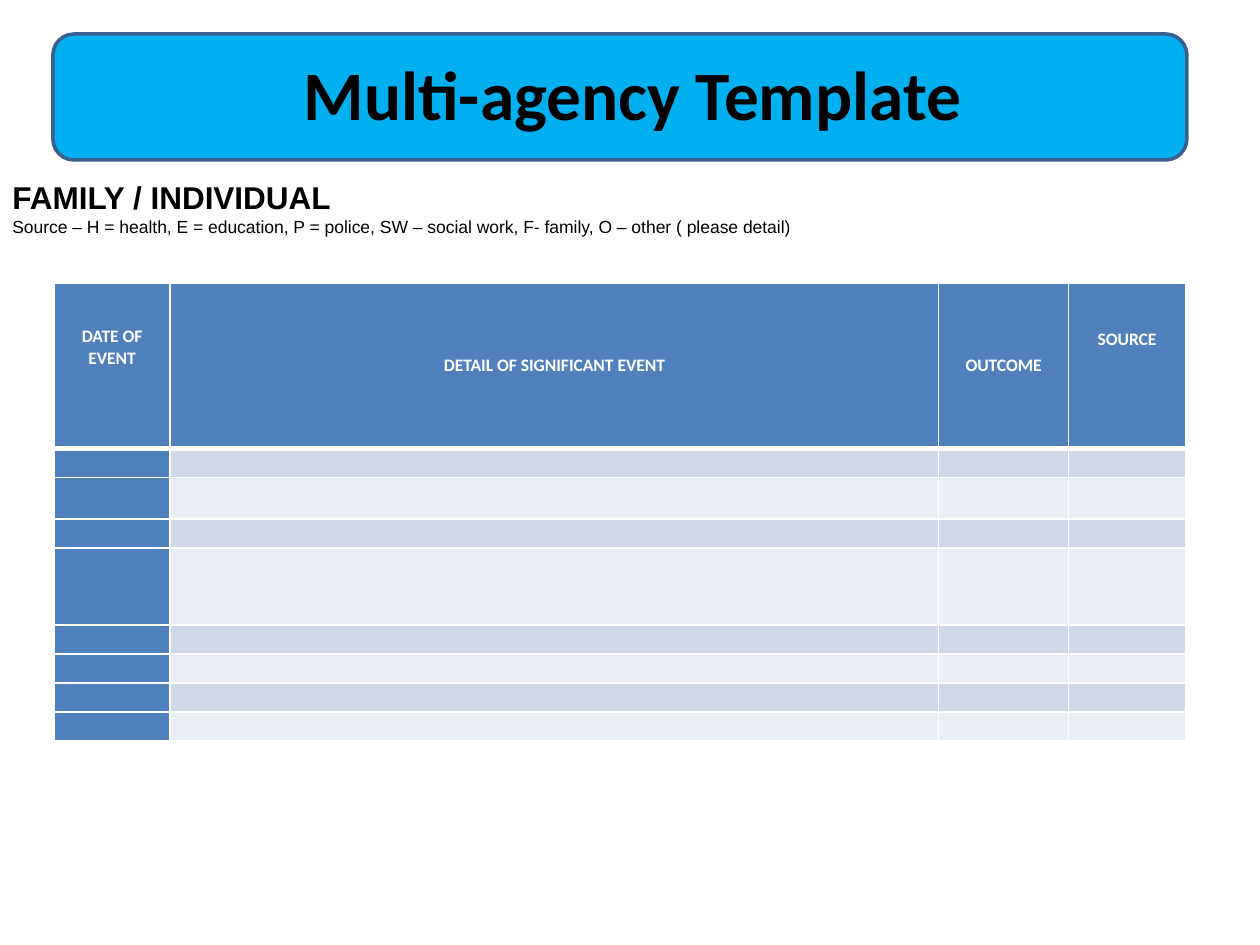
from dataclasses import dataclass

from lxml.etree import SubElement
from pptx import Presentation
from pptx.dml.color import RGBColor
from pptx.enum.shapes import MSO_SHAPE
from pptx.enum.text import MSO_ANCHOR, PP_ALIGN
from pptx.oxml.ns import qn
from pptx.util import Inches, Pt

BLUE, WHITE, BLACK = "4F81BD", "FFFFFF", "000000"
BANDS = ("D0D8E8", "E9EDF4")
COLUMN_WIDTHS = (0.92, 6.1, 1.03, 0.93)
HEADER_HEIGHT = 1.31
ROW_HEIGHTS = (0.23, 0.33, 0.23, 0.61, 0.23, 0.23, 0.23, 0.23)


@dataclass
class Heading:
    text: str
    anchor: MSO_ANCHOR = MSO_ANCHOR.MIDDLE
    top_margin: float = 0


HEADINGS = (
    Heading("DATE OF EVENT", MSO_ANCHOR.TOP, 0.34),
    Heading("DETAIL OF SIGNIFICANT EVENT"),
    Heading("OUTCOME"),
    Heading("SOURCE", MSO_ANCHOR.TOP, 0.36),
)


def color(value: str) -> RGBColor:
    """Turn a hex string into a colour."""
    return RGBColor.from_string(value)


def write(para, text: str, *, size: float, font: str, ink: str = BLACK,
          bold: bool = False, align=PP_ALIGN.LEFT) -> None:
    """Put one formatted span of text into a paragraph."""
    para.alignment = align
    span = para.add_run()
    span.text = text
    span.font.size = Pt(size)
    span.font.name = font
    span.font.bold = bold
    span.font.color.rgb = color(ink)


def add_text_frame(page, left: float, top: float, width: float, height: float,
                   anchor, top_margin: float = 0.05):
    """Add a wrapping text box and return its text frame."""
    box = page.shapes.add_textbox(Inches(left), Inches(top), Inches(width), Inches(height))
    frame = box.text_frame
    frame.word_wrap = True
    frame.vertical_anchor = anchor
    frame.margin_top = Inches(top_margin)
    return frame


def add_banner(page) -> None:
    """Draw the rounded title banner."""
    banner = page.shapes.add_shape(MSO_SHAPE.ROUNDED_RECTANGLE, Inches(0.42), Inches(0.27),
                                   Inches(9), Inches(1))
    banner.shadow.inherit = False
    banner.fill.solid()
    banner.fill.fore_color.rgb = color("00B0F0")
    banner.line.color.rgb = color("3A5F8C")
    banner.line.width = Pt(2)
    title = add_text_frame(page, 0.91, 0.44, 8.22, 0.6, MSO_ANCHOR.MIDDLE)
    write(title.paragraphs[0], "Multi-agency Template", size=39.6, font="Calibri",
          bold=True, align=PP_ALIGN.CENTER)


def style_cell(cell, fill: str, bottom: float = 1, top: float = 1) -> None:
    """Give a cell its white borders, margins and fill."""
    properties = cell._tc.get_or_add_tcPr()
    for side, width in (("L", 1), ("R", 1), ("T", top), ("B", bottom)):
        border = SubElement(properties, qn(f"a:ln{side}"), w=str(Pt(width)))
        paint = SubElement(border, qn("a:solidFill"))
        SubElement(paint, qn("a:srgbClr"), val=WHITE)
    cell.margin_left = cell.margin_right = Inches(0.07)
    cell.margin_top = cell.margin_bottom = 0
    cell.fill.solid()
    cell.fill.fore_color.rgb = color(fill)


def add_event_table(page) -> None:
    """Draw the blank table of significant events."""
    heights = (HEADER_HEIGHT, *ROW_HEIGHTS)
    table = page.shapes.add_table(len(heights), len(COLUMN_WIDTHS), Inches(0.43), Inches(2.25),
                                  Inches(sum(COLUMN_WIDTHS)), Inches(sum(heights))).table
    for column, width in zip(table.columns, COLUMN_WIDTHS):
        column.width = Inches(width)
    for row, height in zip(table.rows, heights):
        row.height = Inches(height)
    for cell, heading in zip(table.rows[0].cells, HEADINGS):
        style_cell(cell, BLUE, bottom=3)
        cell.vertical_anchor = heading.anchor
        cell.margin_top = Inches(heading.top_margin)
        write(cell.text_frame.paragraphs[0], heading.text, size=10, font="Calibri",
              ink=WHITE, bold=True, align=PP_ALIGN.CENTER)
    for index in range(len(ROW_HEIGHTS)):
        for position, cell in enumerate(table.rows[index + 1].cells):
            style_cell(cell, BANDS[index % 2] if position else BLUE, top=1 if index else 3)
            SubElement(cell.text_frame.paragraphs[0]._p, qn("a:endParaRPr"), sz="1000")


def add_source_key(page) -> None:
    """Write the family heading and the key to the sources."""
    frame = add_text_frame(page, 0, 0.74, 8.37, 1.48, MSO_ANCHOR.TOP, top_margin=0.67)
    write(frame.paragraphs[0], "FAMILY / INDIVIDUAL", size=18, font="Arial", bold=True)
    write(frame.add_paragraph(),
          "Source – H = health, E = education, P = police, SW – social work, "
          "F- family, O – other ( please detail)", size=10, font="Arial")


def main() -> None:
    """Build the slide and save the deck."""
    deck = Presentation()
    deck.slide_width, deck.slide_height = Inches(10), Inches(7.5)
    page = deck.slides.add_slide(deck.slide_layouts[6])
    add_banner(page)
    add_event_table(page)
    add_source_key(page)
    deck.save("out.pptx")


if __name__ == "__main__":
    main()
